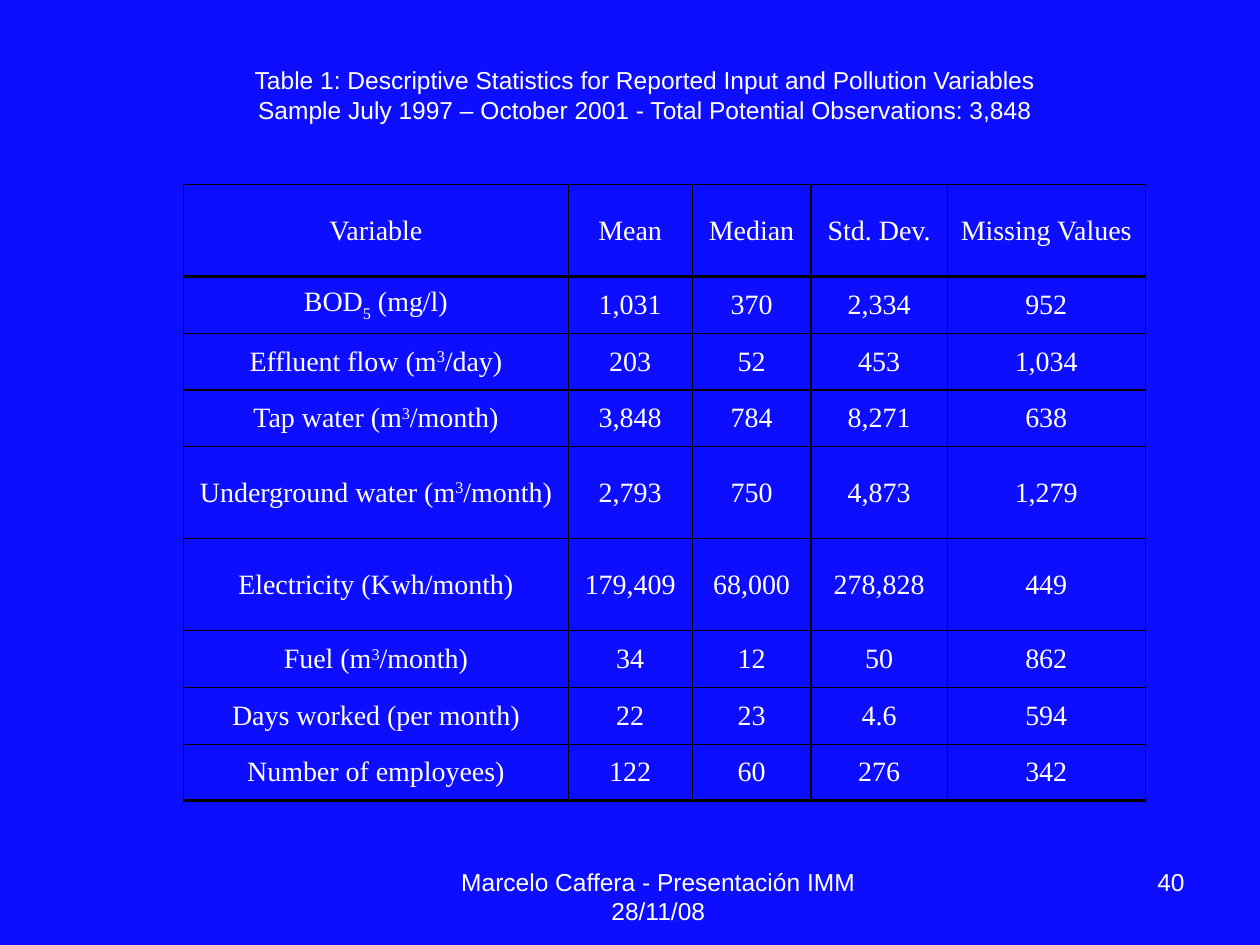
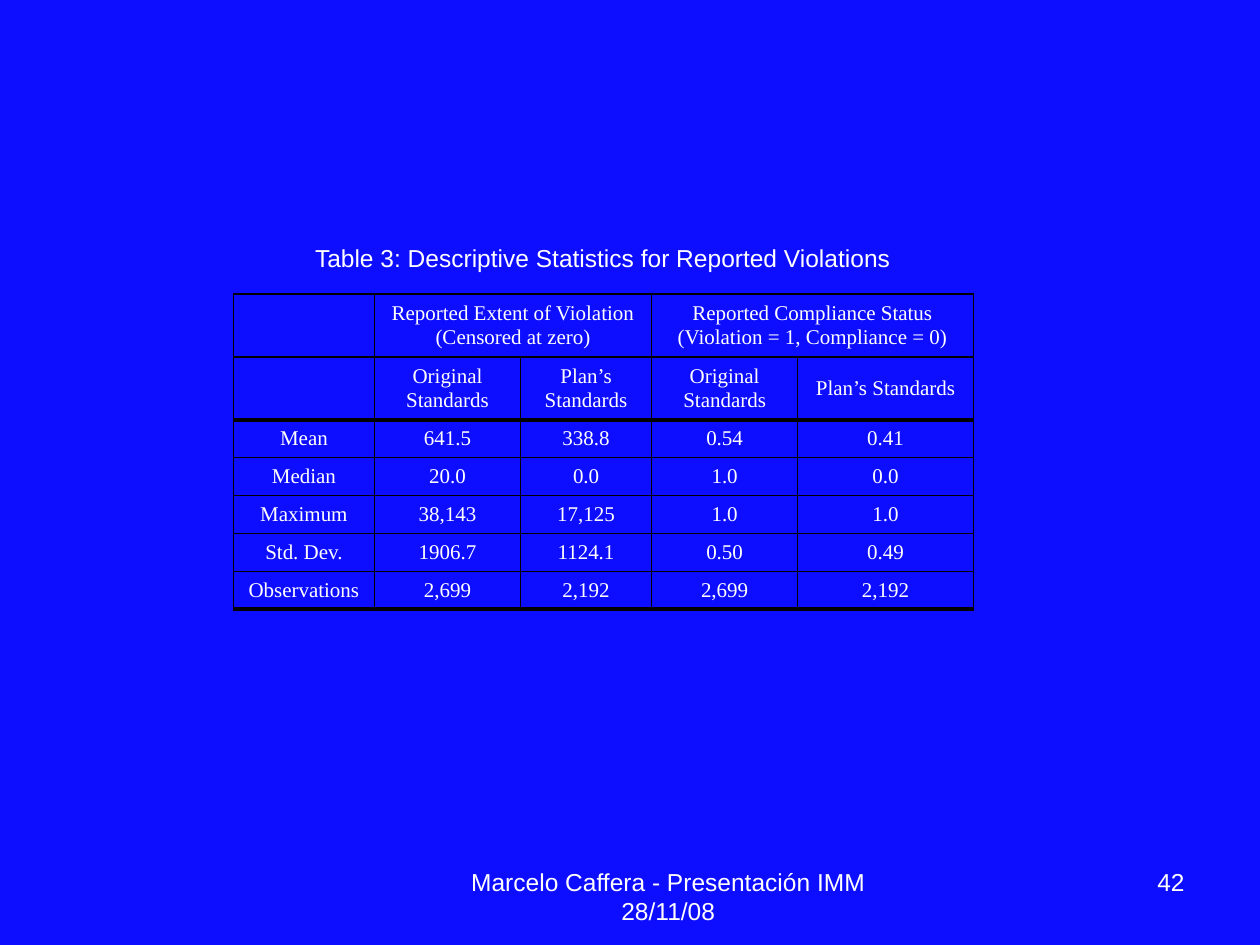
"""Build two slides of descriptive statistics tables on a blue ground."""
from itertools import product

from lxml import etree
from pptx import Presentation
from pptx import util as u
from pptx.dml import color
from pptx.enum import text as t
from pptx.oxml import ns

BLUE, WHITE, BLACK = "0D0DFF", "FFFFFF", "000000"
THIN, THICK = 0.75, 2
SANS, SERIF = "Arial", "Times New Roman"
LEFT, MID, RIGHT = t.PP_ALIGN.LEFT, t.PP_ALIGN.CENTER, t.PP_ALIGN.RIGHT
SHIFT = {"_": "-30000", "^": "30000"}
FOOT = "Marcelo Caffera - Presentación IMM 28/11/08"


def hue(code):
    """Turn a hex string into a colour."""
    return color.RGBColor.from_string(code)


def put(frame, words, face, size, side):
    """Write lines as paragraphs; a part after | with _ or ^ is lowered or raised."""
    for num, line in enumerate(words.split("\n")):
        para = frame.add_paragraph() if num else frame.paragraphs[0]
        para.alignment = side
        for part in line.split("|"):
            run = para.add_run()
            run.text = part.lstrip("_^")
            for key, val in {"name": face, "size": u.Pt(size), "bold": False}.items():
                setattr(run.font, key, val)
            run.font.color.rgb = hue(WHITE)
            if part[:1] in SHIFT:
                run._r.get_or_add_rPr().set("baseline", SHIFT[part[0]])


pages = [
    {
        "num": "40", "foot": 260, "size": 16, "side": MID,
        "title": "Table 1: Descriptive Statistics for Reported Input and Pollution Variables\n"
                 "Sample July 1997 – October 2001 - Total Potential Observations: 3,848",
        "head": (133.2, 33.8, 470.9, 58), "spot": (104.9, 105.5),
        "cols": [219.8, 70.8, 68, 77.8, 113.2],
        "rows": [52.6] + [32.4] * 3 + [52.6] * 2 + [32.4] * 3,
        "merge": [], "rules": {1, 9},
        "data": [
            ["Variable", "Mean", "Median", "Std. Dev.", "Missing Values"],
            ["BOD|_5| (mg/l)", "1,031", "370", "2,334", "952"],
            ["Effluent flow (m|^3|/day)", "203", "52", "453", "1,034"],
            ["Tap water (m|^3|/month)", "3,848", "784", "8,271", "638"],
            ["Underground water (m|^3|/month)", "2,793", "750", "4,873", "1,279"],
            ["Electricity (Kwh/month)", "179,409", "68,000", "278,828", "449"],
            ["Fuel (m|^3|/month)", "34", "12", "50", "862"],
            ["Days worked (per month)", "22", "23", "4.6", "594"],
            ["Number of employees)", "122", "60", "276", "342"],
        ],
    },
    {
        "num": "42", "foot": 271.4, "size": 12, "side": LEFT,
        "title": "Table 3: Descriptive Statistics for Reported Violations",
        "head": (172.8, 135.4, 344.9, 41), "spot": (133.4, 168),
        "cols": [80.6, 83.5, 74.9, 83.5, 100.4],
        "rows": [36] * 2 + [21.6] * 5,
        "merge": [1, 3], "rules": {2, 7},
        "data": [
            ["", "Reported Extent of Violation\n(Censored at zero)", "",
             "Reported Compliance Status\n(Violation = 1, Compliance = 0)", ""],
            ["", *["Original Standards", "Plan’s Standards"] * 2],
            ["Mean", "641.5", "338.8", "0.54", "0.41"],
            ["Median", "20.0", "0.0", "1.0", "0.0"],
            ["Maximum", "38,143", "17,125", "1.0", "1.0"],
            ["Std. Dev.", "1906.7", "1124.1", "0.50", "0.49"],
            ["Observations", "2,699", "2,192", "2,699", "2,192"],
        ],
    },
]

deck = Presentation()
deck.slide_width, deck.slide_height = u.Pt(720), u.Pt(540)
ground = deck.slide_master.background.fill
ground.solid()
ground.fore_color.rgb = hue(BLUE)

for page in pages:
    slide = deck.slides.add_slide(deck.slide_layouts[5])
    title = slide.shapes.title
    for key, val in zip(("left", "top", "width", "height"), page["head"]):
        setattr(title, key, u.Pt(val))
    frame = title.text_frame
    look = {"word_wrap": True, "auto_size": t.MSO_AUTO_SIZE.NONE,
            "vertical_anchor": t.MSO_ANCHOR.TOP}
    for key, val in look.items():
        setattr(frame, key, val)
    put(frame, page["title"], SANS, 14, page["side"])

    cols, rows = page["cols"], page["rows"]
    box = (*page["spot"], sum(cols), sum(rows))
    table = slide.shapes.add_table(len(rows), len(cols), *map(u.Pt, box)).table
    table.first_row = table.horz_banding = False
    for col, wide in zip(table.columns, cols):
        col.width = u.Pt(wide)
    for row, high in zip(table.rows, rows):
        row.height = u.Pt(high)
    for start in page["merge"]:
        table.cell(0, start).merge(table.cell(0, start + 1))

    for r, c in product(range(len(rows)), range(len(cols))):
        cell = table.cell(r, c)
        cell.vertical_anchor = t.MSO_ANCHOR.MIDDLE
        cell.fill.background()
        if page["data"][r][c]:
            put(cell.text_frame, page["data"][r][c], SERIF, page["size"], MID)
        edges = {"lnL": THIN, "lnR": THIN,
                 "lnT": THICK if r in page["rules"] else THIN,
                 "lnB": THICK if r + 1 in page["rules"] else THIN}
        for spot, (tag, wide) in enumerate(edges.items()):
            line = etree.Element(ns.qn("a:" + tag), w=str(u.Pt(wide)))
            fill = etree.SubElement(line, ns.qn("a:solidFill"))
            etree.SubElement(fill, ns.qn("a:srgbClr"), val=BLACK)
            cell._tc.get_or_add_tcPr().insert(spot, line)

    for words, left, wide, side in ((page["num"], 516.2, 167.8, RIGHT),
                                    (FOOT, 246.2, page["foot"], MID)):
        frame = slide.shapes.add_textbox(*map(u.Pt, (left, 491.8, wide, 37.4))).text_frame
        frame.word_wrap = True
        put(frame, words, SANS, 14, side)

deck.save("out.pptx")
